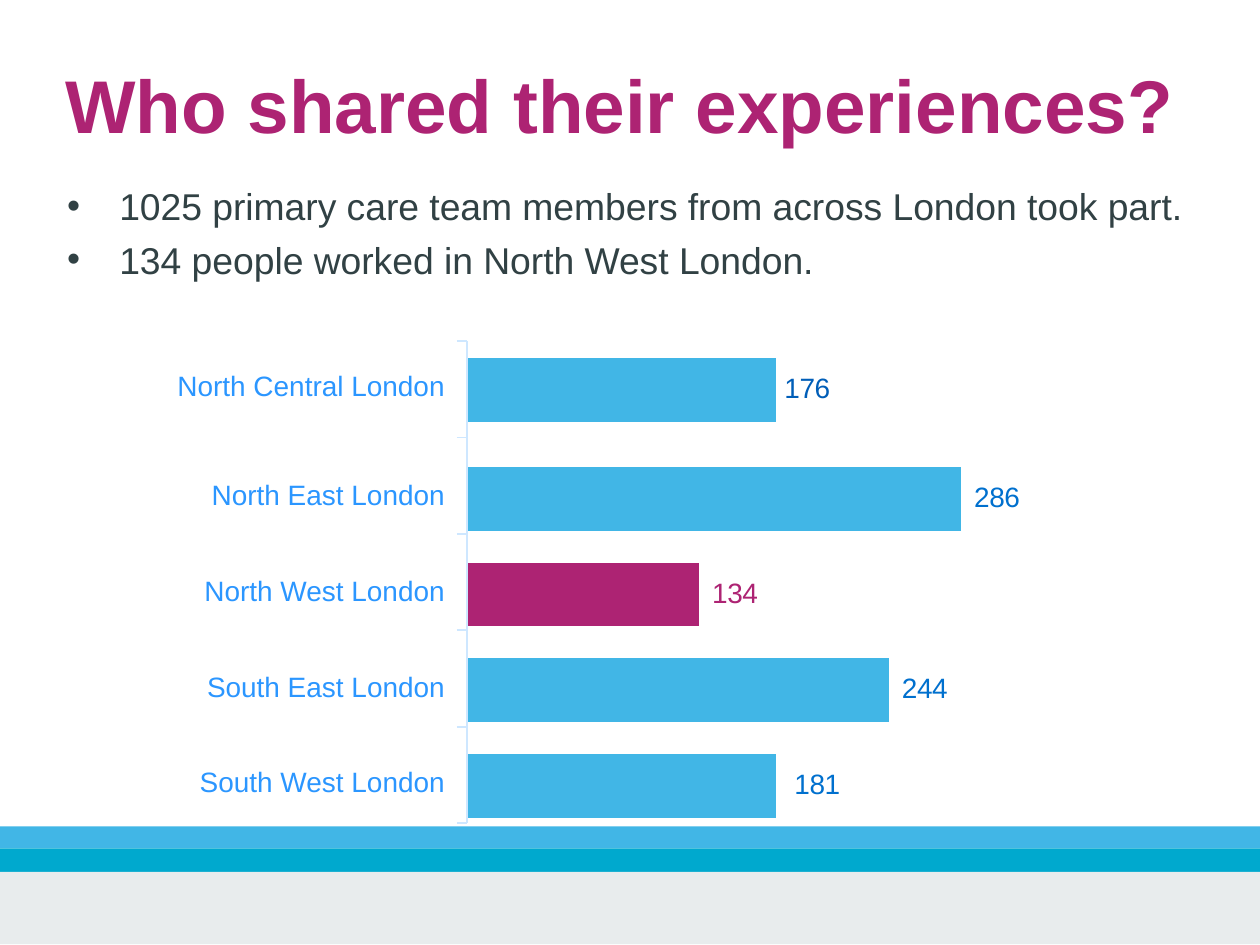
from lxml import etree
from pptx import Presentation
from pptx.dml.color import RGBColor
from pptx.enum.shapes import MSO_CONNECTOR as Connector, MSO_SHAPE as Shape
from pptx.enum.text import MSO_ANCHOR as Anchor, MSO_AUTO_SIZE as AutoSize, PP_ALIGN as Align
from pptx.oxml.ns import qn
from pptx.util import Inches, Pt

MAGENTA = RGBColor(0xAD, 0x23, 0x73)
SLATE = RGBColor(0x31, 0x41, 0x44)
SKY = RGBColor(0x41, 0xB6, 0xE6)
TEAL = RGBColor(0x00, 0xA9, 0xCE)
MIST = RGBColor(0xE8, 0xEC, 0xED)
LABEL_BLUE = RGBColor(0x2B, 0x96, 0xFF)
DEEP_BLUE = RGBColor(0x00, 0x5E, 0xB8)
VALUE_BLUE = RGBColor(0x00, 0x70, 0xCE)
AXIS_BLUE = RGBColor(0xCE, 0xE7, 0xFF)
NO_STYLE = "{2D5ABB26-0587-4C30-8999-92F81FD0307C}"


def write(para, text, size, color, bold=False, spacing=0):
    span = para.add_run()
    span.text = text
    looks = {"name": "Arial", "size": Pt(size), "bold": bold}
    for name, value in looks.items():
        setattr(span.font, name, value)
    span.font.color.rgb = color
    span._r.get_or_add_rPr().set("spc", str(spacing))


def draw_line(page, x1, y1, x2, y2):
    line = page.shapes.add_connector(
        Connector.STRAIGHT, Inches(x1), Inches(y1), Inches(x2), Inches(y2))
    line.line.color.rgb = AXIS_BLUE
    line.line.width = Pt(0.75)
    etree.SubElement(line._element.spPr, qn("a:effectLst"))


deck = Presentation()
deck.slide_width = Inches(7.5)
deck.slide_height = deck.slide_width * 3 // 4
page = deck.slides.add_slide(deck.slide_layouts[1])

title, body = page.shapes.title, page.placeholders[1]
places = [(title, 0.39, 0.35, 6.7, 0.56), (body, 0.38, 1.09, 6.69, 0.6)]
frame_format = {
    "margin_left": 0, "margin_top": 0, "margin_right": 0, "margin_bottom": 0,
    "word_wrap": True, "auto_size": AutoSize.NONE, "vertical_anchor": Anchor.TOP,
}
for box, left, top, width, height in places:
    box.left, box.top = Inches(left), Inches(top)
    box.width, box.height = Inches(width), Inches(height)
    for name, value in frame_format.items():
        setattr(box.text_frame, name, value)

heading = title.text_frame.paragraphs[0]
heading.alignment = Align.LEFT
write(heading, "Who shared their experiences?", 32, MAGENTA, True)

points = [
    "1025 primary care team members from across London took part.",
    "134 people worked in North West London.",
]
for index, point in enumerate(points):
    frame = body.text_frame
    para = frame.add_paragraph() if index else frame.paragraphs[0]
    para.space_before, para.space_after = Pt(0), Pt(3.8)
    properties = para._p.get_or_add_pPr()
    properties.set("marL", str(Inches(0.33)))
    properties.set("indent", str(Inches(-0.31)))
    write(para, point, 16, SLATE)

regions = [
    ("North Central London", "176", 2, 0.05, SKY, DEEP_BLUE),
    ("North East London", "286", 4, 0.08, SKY, VALUE_BLUE),
    ("North West London", "134", 1, 0.08, MAGENTA, MAGENTA),
    ("South East London", "244", 3, 0.08, SKY, VALUE_BLUE),
    ("South West London", "181", 2, 0.11, SKY, VALUE_BLUE),
]
column_widths = [1.77, 1.38, 0.46, 0.67, 0.43, 0.4]
row_heights = [0.38, 0.27] + [0.38, 0.19] * 3 + [0.38]
table_frame = page.shapes.add_table(
    len(row_heights), len(column_widths), Inches(1.01), Inches(2.13),
    Inches(sum(column_widths)), Inches(sum(row_heights)))
table = table_frame.table
table.first_row = table.horz_banding = False
table._tbl.tblPr.find(qn("a:tableStyleId")).text = NO_STYLE
for column, width in zip(table.columns, column_widths):
    column.width = Inches(width)
for row, height in zip(table.rows, row_heights):
    row.height = Inches(height)
for cell in table.iter_cells():
    cell.margin_left = cell.margin_right = cell.margin_top = cell.margin_bottom = 0
    cell.fill.background()
    ending = etree.SubElement(cell.text_frame.paragraphs[0]._p, qn("a:endParaRPr"))
    ending.set("sz", "600")
table.cell(0, 4).merge(table.cell(1, 5))

for index, (region, count, bar_columns, indent, bar_color, count_color) in enumerate(regions):
    label = table.cell(2 * index, 0)
    label.margin_top, label.margin_right = Inches(0.08), Inches(0.13)
    label.text_frame.paragraphs[0].alignment = Align.RIGHT
    write(label.text_frame.paragraphs[0], region, 12, LABEL_BLUE)
    for column in range(1, bar_columns + 1):
        bar = table.cell(2 * index, column)
        bar.fill.solid()
        bar.fill.fore_color.rgb = bar_color
    value = table.cell(2 * index, bar_columns + 1)
    value.margin_top, value.margin_left = Inches(0.09), Inches(indent)
    write(value.text_frame.paragraphs[0], count, 12, count_color, spacing=-20)

axis_x, axis_top, axis_bottom = 2.78, 2.03, 4.9
tick_gap = (axis_bottom - axis_top) / len(regions)
draw_line(page, axis_x, axis_top, axis_x, axis_bottom)
for index in range(len(regions) + 1):
    tick_y = axis_top + index * tick_gap
    draw_line(page, 2.72, tick_y, axis_x, tick_y)

bands = [(4.92, 5.05, SKY), (5.05, 5.19, TEAL), (5.19, 5.62, MIST)]
for top, bottom, color in bands:
    band = page.shapes.add_shape(
        Shape.RECTANGLE, 0, Inches(top), deck.slide_width, Inches(bottom - top))
    band.shadow.inherit = False
    band.fill.solid()
    band.fill.fore_color.rgb = color
    band.line.fill.background()

deck.save("out.pptx")
